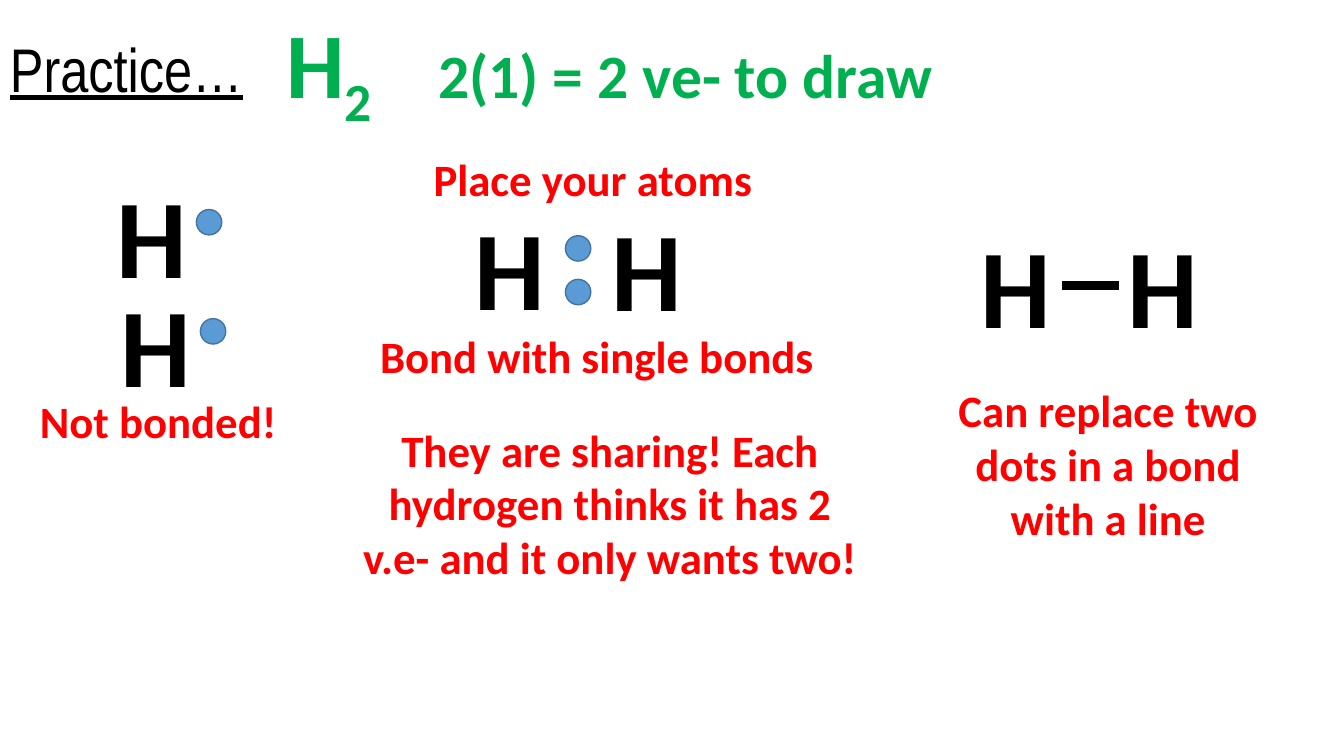
from dataclasses import dataclass

from lxml import etree
from pptx import Presentation
from pptx.dml.color import RGBColor
from pptx.enum.shapes import MSO_CONNECTOR, MSO_SHAPE
from pptx.enum.text import MSO_ANCHOR, PP_ALIGN
from pptx.oxml.ns import qn
from pptx.util import Cm, Pt

OVAL = MSO_SHAPE.OVAL
STRAIGHT = MSO_CONNECTOR.STRAIGHT
TOP, MIDDLE = MSO_ANCHOR.TOP, MSO_ANCHOR.MIDDLE
LEFT, CENTER = PP_ALIGN.LEFT, PP_ALIGN.CENTER


@dataclass(frozen=True)
class Theme:
    black: RGBColor = RGBColor(0x00, 0x00, 0x00)
    green: RGBColor = RGBColor(0x00, 0xB0, 0x50)
    red: RGBColor = RGBColor(0xFF, 0x00, 0x00)
    electron_fill: RGBColor = RGBColor(0x5B, 0x9B, 0xD5)
    electron_edge: RGBColor = RGBColor(0x43, 0x73, 0x9E)
    title_font: str = "Arial Narrow"
    body_font: str = "Calibri"
    heading_size: int = 44
    formula_size: int = 66
    atom_size: int = 80
    caption_size: int = 32


class LewisSlide:
    def __init__(self, page, theme):
        self.page = page
        self.theme = theme

    def text(self, text, left, top, width, height, *, size, color, font=None,
             bold=True, underline=False, align=LEFT, anchor=TOP, spacing=1.0,
             subscript=""):
        """Add a text box, with an optional subscript after the text."""
        box = self.page.shapes.add_textbox(Cm(left), Cm(top), Cm(width), Cm(height))
        frame = box.text_frame
        frame.word_wrap = True
        frame.vertical_anchor = anchor
        para = frame.paragraphs[0]
        para.alignment = align
        para.line_spacing = spacing
        for part in filter(None, (text, subscript)):
            span = para.add_run()
            span.text = part
            span.font.name = font or self.theme.body_font
            span.font.size = Pt(size)
            span.font.bold = bold
            span.font.underline = underline
            span.font.color.rgb = color
        if subscript:
            span.font._element.set("baseline", "-25000")

    def atom(self, left, top):
        self.text("H", left, top, 3.38, 3.68,
                  size=self.theme.atom_size, color=self.theme.black)

    def electron(self, left, top):
        dot = self.page.shapes.add_shape(OVAL, Cm(left), Cm(top), Cm(0.64), Cm(0.64))
        dot.shadow.inherit = False
        dot.fill.solid()
        dot.fill.fore_color.rgb = self.theme.electron_fill
        dot.line.color.rgb = self.theme.electron_edge
        dot.line.width = Pt(1)

    def bond(self, start, end, level):
        line = self.page.shapes.add_connector(
            STRAIGHT, Cm(start), Cm(level), Cm(end), Cm(level))
        line.line.color.rgb = self.theme.black
        line.line.width = Pt(6)
        etree.SubElement(line._element.spPr, qn("a:effectLst"))

    def caption(self, text, left, top, width, height=1.63):
        self.text(text, left, top, width, height, align=CENTER,
                  size=self.theme.caption_size, color=self.theme.red)


def main():
    deck = Presentation()
    deck.slide_width, deck.slide_height = Cm(33.87), Cm(19.05)
    theme = Theme()
    slide = LewisSlide(deck.slides.add_slide(deck.slide_layouts[6]), theme)

    slide.text("Practice…", 0, 0, 31.55, 3.68, size=theme.heading_size,
               color=theme.black, font=theme.title_font, bold=False,
               underline=True, anchor=MIDDLE, spacing=0.9)
    slide.text("H", 6.96, 0.03, 3.38, 3.07, size=theme.formula_size,
               color=theme.green, subscript="2")
    slide.text("2(1) = 2 ve- to draw", 10.8, 0.81, 19.15, 2.13,
               size=theme.heading_size, color=theme.green)

    # Separate atoms, each with its own electron
    for left, top in ((2.69, 4.06), (2.79, 6.81)):
        slide.atom(left, top)
        slide.electron(left + 2.26, top + 1.22)
    slide.caption("Not bonded!", 0.13, 9.8, 7.72)

    # Shared electron pair
    slide.caption("Place your atoms", 8.33, 3.71, 13.23)
    slide.atom(11.71, 4.88)
    slide.atom(15.16, 4.9)
    for top in (5.94, 7.04):
        slide.electron(14.25, top)
    slide.caption("Bond with single bonds", 8.43, 8.15, 13.23)
    slide.caption("They are sharing! Each hydrogen thinks it has 2 v.e- "
                  "and it only wants two!", 8.76, 10.52, 13.23, 4.37)

    # Bond drawn as a line
    for left in (24.46, 28.17):
        slide.atom(left, 5.33)
    slide.bond(26.77, 28.19, 7.19)
    slide.caption("Can replace two dots in a bond with a line",
                  23.22, 9.53, 9.42, 4.37)

    deck.save("out.pptx")


if __name__ == "__main__":
    main()
